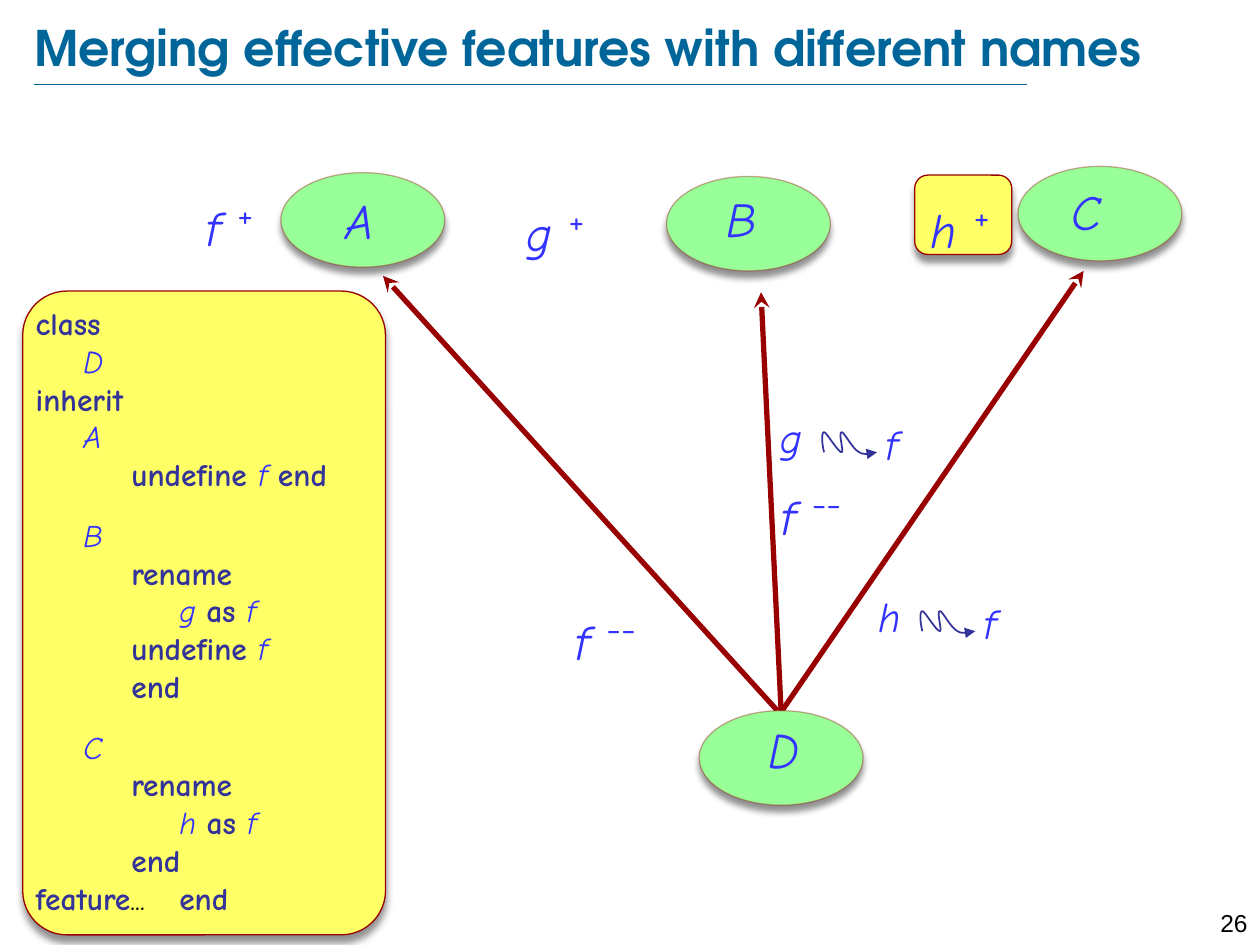
from dataclasses import dataclass

from lxml import etree
from pptx import Presentation
from pptx.dml.color import RGBColor
from pptx.enum import shapes, text
from pptx.oxml.ns import qn
from pptx.util import Inches, Pt


@dataclass(frozen=True)
class Theme:
    title_font: str = "TeX Gyre Adventor"
    body_font: str = "Comic Neue"
    number_font: str = "Arial"
    title: str = "006699"
    name: str = "3333FF"
    keyword: str = "333399"
    plain: str = "000000"
    edge: str = "990000"
    oval: str = "99FF99"
    panel: str = "FFFF66"
    large: int = 28
    rename: int = 24
    code: int = 18
    number: int = 14
    mark: int = 36


THEME = Theme()
INDENT = 0.38
BLOCK_GAP = 13

CLASSES = [  # oval left, oval top, label left, label top, name
    (2.23, 1.37, 2.54, 1.46, "A"),
    (5.29, 1.40, 5.57, 1.45, "B"),
    (8.08, 1.32, 8.31, 1.39, "C"),
    (5.55, 5.64, 5.91, 5.66, "D"),
]
INHERITANCE = [
    ((6.2, 5.66), (6.04, 2.32)),
    ((6.17, 5.64), (3.04, 2.19)),
    ((6.2, 5.65), (8.6, 2.15)),
]
FEATURES = [  # left, top, width, feature, mark, framed
    (7.26, 1.39, 0.77, "h ", "+", True),
    (1.51, 1.38, 0.83, "f ", "+", False),
    (4.05, 1.42, 0.76, "g ", "+", False),
    (4.44, 4.66, 0.98, "f ", "--", False),
    (6.07, 3.67, 0.98, "f ", "--", False),
]
RENAMES = [(6.87, 4.64, "h"), (6.09, 3.22, "g")]
CODE = [  # level, spans parted by "|"
    (0, "class"), (1, "D"), (0, "inherit"),
    (1, "A"), (2, "undefine |f |end"),
    (1, "B"), (2, "rename"), (3, "g |as |f"), (2, "undefine |f"), (2, "end"),
    (1, "C"), (2, "rename"), (3, "h |as |f"), (2, "end"),
    (0, "feature|...|\tend"),
]
# Bezier segments of the rename arrow, relative to its group
SQUIGGLE_START = (0.45, 0.37)
SQUIGGLE = [
    ((0.43, 0.29), (0.43, 0.21), (0.45, 0.21)),
    ((0.47, 0.21), (0.56, 0.37), (0.59, 0.37)),
    ((0.61, 0.37), (0.56, 0.21), (0.59, 0.21)),
    ((0.61, 0.21), (0.68, 0.35), (0.73, 0.37)),
    ((0.77, 0.40), (0.85, 0.37), (0.87, 0.37)),
]


def rgb(value):
    return RGBColor.from_string(value)


def set_font(font, name, size, color, bold=False, italic=False):
    font.name, font.size = name, Pt(size)
    font.color.rgb = rgb(color)
    font.bold, font.italic = bold, italic


def set_line(line, color, width):
    line.color.rgb = rgb(color)
    line.width = Pt(width)


def add_arrowhead(line, kind):
    etree.SubElement(line._get_or_add_ln(), qn("a:tailEnd"), type=kind)


def add_shadow(shape):
    effects = shape._element.spPr.find(qn("a:effectLst"))
    shadow = etree.SubElement(effects, qn("a:outerShdw"), blurRad=str(Pt(4)),
                              dist=str(Pt(4)), dir="5400000", rotWithShape="0")
    color = etree.SubElement(shadow, qn("a:srgbClr"), val="000000")
    etree.SubElement(color, qn("a:alpha"), val="43000")


def add_line(page, start, end, color, width, head=None):
    line = page.shapes.add_connector(shapes.MSO_CONNECTOR.STRAIGHT,
                                     *map(Inches, start + end))
    set_line(line.line, color, width)
    if head:
        add_arrowhead(line.line, head)
    etree.SubElement(line._element.spPr, qn("a:effectLst"))


def add_block(page, kind, at, fill=None):
    """Add a preset shape; a filled one also gets an outline and a shadow."""
    shape = page.shapes.add_shape(kind, *map(Inches, at))
    shape.shadow.inherit = False
    if fill:
        shape.fill.solid()
        shape.fill.fore_color.rgb = rgb(fill)
        set_line(shape.line, THEME.edge, 0.75)
        add_shadow(shape)
    else:
        shape.fill.background()
        shape.line.fill.background()
    frame = shape.text_frame
    frame.word_wrap = True
    frame.vertical_anchor = text.MSO_ANCHOR.TOP
    frame.paragraphs[0].alignment = text.PP_ALIGN.LEFT
    return shape


def add_label(parent, at, words, size, color=THEME.name, font=THEME.body_font,
              align=text.PP_ALIGN.LEFT, italic=True):
    box = parent.shapes.add_textbox(*map(Inches, at))
    box.text_frame.word_wrap = True
    para = box.text_frame.paragraphs[0]
    para.text, para.alignment = words, align
    set_font(para.font, font, size, color, italic=italic)


def add_title(page, words):
    title = page.shapes.title
    title.left, title.top, title.width, title.height = map(
        Inches, (0.27, 0.13, 9.3, 0.48))
    frame = title.text_frame
    frame.margin_left = frame.margin_right = 0
    frame.margin_top = frame.margin_bottom = 0
    frame.vertical_anchor = text.MSO_ANCHOR.MIDDLE
    para = frame.paragraphs[0]
    para.text, para.alignment = words, text.PP_ALIGN.LEFT
    set_font(para.font, THEME.title_font, THEME.large, THEME.title, bold=True)


def add_oval(page, left, top):
    oval = add_block(page, shapes.MSO_SHAPE.OVAL, (left, top, 1.3, 0.75), THEME.oval)
    color = oval.line._get_or_add_ln().find(".//" + qn("a:srgbClr"))
    etree.SubElement(color, qn("a:alpha"), val="34000")


def add_feature(page, left, top, width, feature, mark, framed):
    box = add_block(page, shapes.MSO_SHAPE.ROUNDED_RECTANGLE,
                    (left, top, width, 0.63), THEME.panel if framed else None)
    para = box.text_frame.paragraphs[0]
    for words, size, italic in ((feature, THEME.large, True), (mark, THEME.mark, False)):
        span = para.add_run()
        span.text = words
        set_font(span.font, THEME.body_font, size, THEME.name, italic=italic)
    span.font._element.set("baseline", "30000")


def bezier(start, first, second, end, steps=8):
    for step in range(1, steps + 1):
        t = step / steps
        weights = ((1 - t) ** 3, 3 * t * (1 - t) ** 2, 3 * t * t * (1 - t), t ** 3)
        yield tuple(sum(w * p[axis] for w, p in zip(weights, (start, first, second, end)))
                    for axis in (0, 1))


def add_rename(page, left, top, old):
    """Group the old name, a wavy arrow and the new name f."""
    group = page.shapes.add_group_shape()
    points = [SQUIGGLE_START]
    for segment in SQUIGGLE:
        points.extend(bezier(points[-1], *segment))
    places = [(Inches(left + x), Inches(top + y)) for x, y in points]
    builder = group.shapes.build_freeform(*places[0])
    builder.add_line_segments(places[1:], close=False)
    arrow = builder.convert_to_shape()
    arrow.shadow.inherit = False
    arrow.fill.background()
    set_line(arrow.line, THEME.keyword, 1)
    add_arrowhead(arrow.line, "triangle")
    add_label(group, (left, top, 0.38, 0.5), old, THEME.rename)
    add_label(group, (left + 0.84, top + 0.05, 0.38, 0.5), "f", THEME.rename)


def add_code(page):
    panel = add_block(page, shapes.MSO_SHAPE.ROUNDED_RECTANGLE,
                      (0.18, 2.31, 2.88, 5.11), THEME.panel)
    panel.adjustments[0] = 0.122
    frame = panel.text_frame
    frame.margin_left = frame.margin_right = 0
    frame.margin_top = frame.margin_bottom = 0
    for index, (level, line) in enumerate(CODE):
        para = frame.add_paragraph() if index else frame.paragraphs[0]
        para.alignment = text.PP_ALIGN.LEFT
        if line in ("B", "C"):
            para.space_before = Pt(BLOCK_GAP)
        props = para._p.get_or_add_pPr()
        props.set("marL", str(Inches(level * INDENT)))
        if "\t" in line:
            tabs = etree.SubElement(props, qn("a:tabLst"))
            etree.SubElement(tabs, qn("a:tab"), pos=str(Inches(3 * INDENT)), algn="l")
        for words in line.split("|"):
            is_name, is_plain = len(words.strip()) == 1, words == "..."
            color = THEME.name if is_name else THEME.plain if is_plain else THEME.keyword
            span = para.add_run()
            span.text = words
            set_font(span.font, THEME.body_font, THEME.code, color,
                     bold=not (is_name or is_plain), italic=is_name)


def main():
    deck = Presentation()
    deck.slide_width, deck.slide_height = Inches(10), Inches(7.5)
    page = deck.slides.add_slide(deck.slide_layouts[5])
    add_title(page, "Merging effective features with different names")
    add_line(page, (0.27, 0.67), (8.15, 0.67), THEME.title, 0.25)
    add_label(page, (9.45, 7.16, 0.55, 0.24), "26", THEME.number, THEME.plain,
              THEME.number_font, text.PP_ALIGN.RIGHT, italic=False)
    for start, end in INHERITANCE:
        add_line(page, start, end, THEME.edge, 3, "stealth")
    for left, top, label_left, label_top, name in CLASSES:
        add_oval(page, left, top)
        add_label(page, (label_left, label_top, 0.63, 0.57), name, THEME.large,
                  align=text.PP_ALIGN.CENTER)
    for feature in FEATURES:
        add_feature(page, *feature)
    add_code(page)
    for rename in RENAMES:
        add_rename(page, *rename)
    deck.save("out.pptx")


if __name__ == "__main__":
    main()
